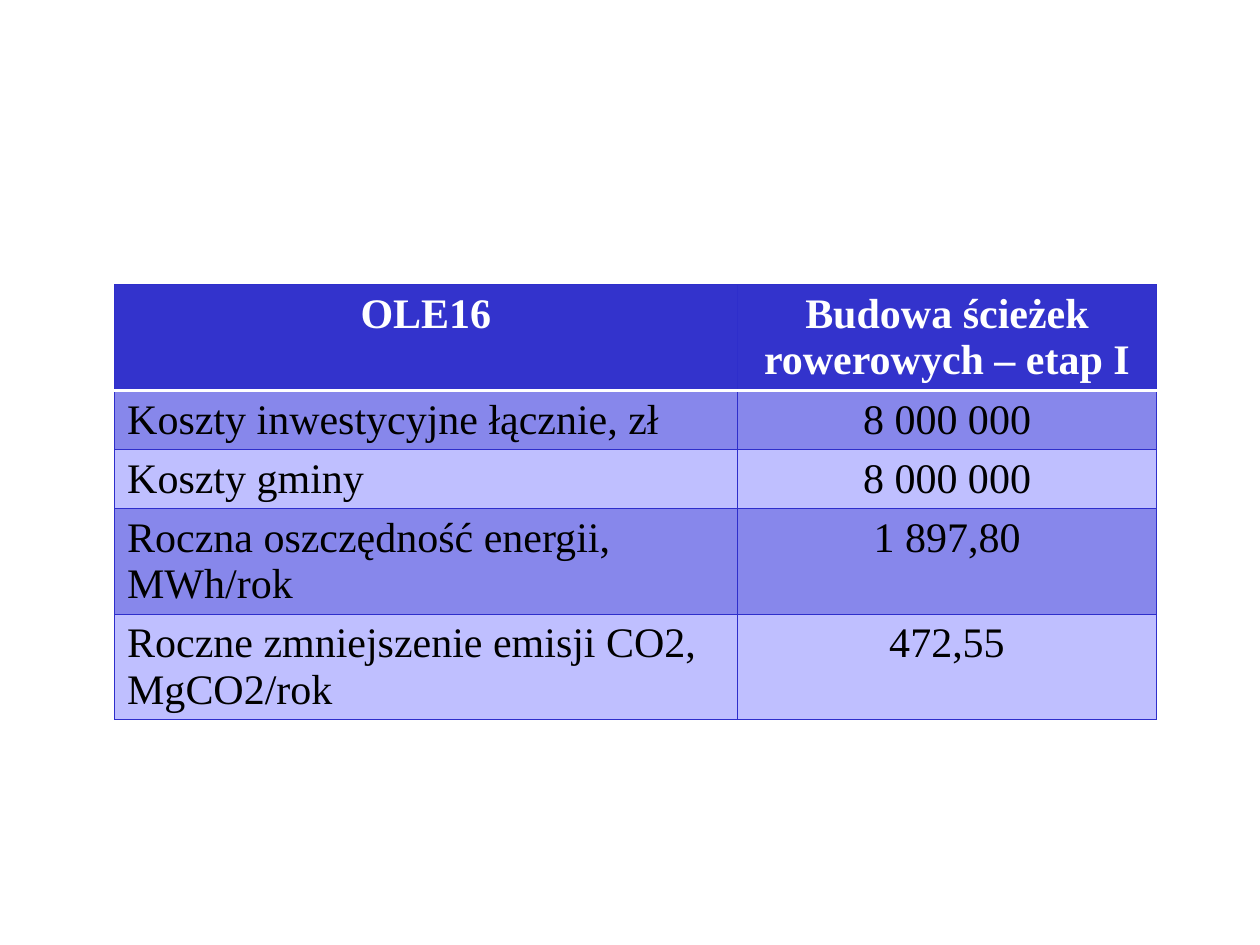
from lxml.etree import SubElement
from pptx import Presentation
from pptx.dml.color import RGBColor
from pptx.enum.text import PP_ALIGN
from pptx.oxml.ns import qn
from pptx.util import Cm, Pt

WHITE = RGBColor(0xFF, 0xFF, 0xFF)
BLACK = RGBColor(0x00, 0x00, 0x00)
HEADER = RGBColor(0x33, 0x33, 0xCC)
BAND_DARK = RGBColor(0x87, 0x87, 0xEB)
BAND_LIGHT = RGBColor(0xBF, 0xBF, 0xFF)
BORDER = RGBColor(0x2E, 0x2E, 0xCB)

FONT = "Times New Roman"
COL_WIDTHS = (12.55, 8.46)
HEADER_HEIGHT, ROW_HEIGHT = 2.13, 1.04
ROWS = (
    ("OLE16", "Budowa ścieżek rowerowych – etap I"),
    ("Koszty inwestycyjne łącznie, zł", "8 000 000"),
    ("Koszty gminy", "8 000 000"),
    ("Roczna oszczędność energii, MWh/rok", "1 897,80"),
    ("Roczne zmniejszenie emisji CO2, MgCO2/rok", "472,55"),
)


def add_border(cell, side, color, width):
    """Draw one side (L, R, T or B); call before the cell is filled."""
    ln = SubElement(cell._tc.get_or_add_tcPr(), qn(f"a:ln{side}"), w=str(Pt(width)))
    fill = SubElement(ln, qn("a:solidFill"))
    SubElement(fill, qn("a:srgbClr"), val=str(color))


def format_cell(cell, row, col):
    is_header = row == 0
    for side in "LRTB":
        under_header = (row, side) in ((0, "B"), (1, "T"))
        add_border(cell, side, *((WHITE, 2) if under_header else (BORDER, 0.75)))
    cell.fill.solid()
    band = BAND_DARK if row % 2 else BAND_LIGHT
    cell.fill.fore_color.rgb = HEADER if is_header else band

    p = cell.text_frame.paragraphs[0]
    p.alignment = PP_ALIGN.CENTER if is_header or col else PP_ALIGN.LEFT
    p.font.name = FONT
    p.font.size = Pt(24)
    p.font.bold = is_header
    p.font.color.rgb = WHITE if is_header else BLACK


def add_cost_table(s, left, top, width, height):
    table = s.shapes.add_table(len(ROWS), len(COL_WIDTHS), left, top, width, height).table
    table.horz_banding = False
    for column, share in zip(table.columns, COL_WIDTHS):
        column.width = int(width * share / sum(COL_WIDTHS))
    for i, texts in enumerate(ROWS):
        table.rows[i].height = Cm(ROW_HEIGHT if i else HEADER_HEIGHT)
        for j, text in enumerate(texts):
            cell = table.cell(i, j)
            cell.text = text
            format_cell(cell, i, j)


def main():
    prs = Presentation()
    prs.slide_width, prs.slide_height = Cm(25.4), Cm(19.05)
    s = prs.slides.add_slide(prs.slide_layouts[6])
    height = HEADER_HEIGHT + ROW_HEIGHT * (len(ROWS) - 1)
    add_cost_table(s, Cm(2.31), Cm(5.74), Cm(sum(COL_WIDTHS)), Cm(height))
    prs.save("out.pptx")


if __name__ == "__main__":
    main()
